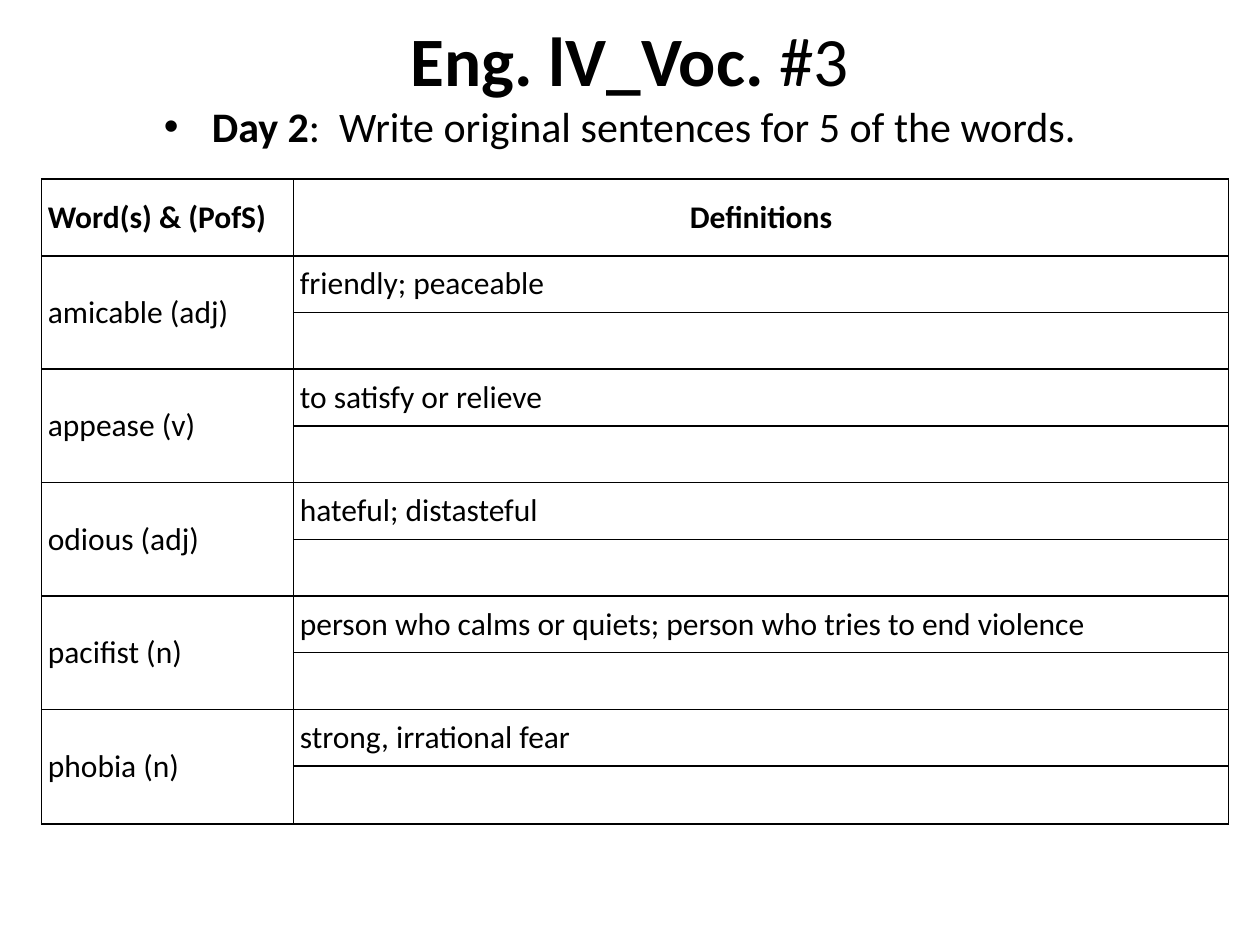
from lxml import etree
from pptx import Presentation
from pptx import util as u
from pptx.dml.color import RGBColor
from pptx.enum import text
from pptx.oxml import ns

COLORS = {"ink": "000000", "paper": "FFFFFF"}
WORDS = [
    ("amicable (adj)", "friendly; peaceable"),
    ("appease (v)", "to satisfy or relieve"),
    ("odious (adj)", "hateful; distasteful"),
    ("pacifist (n)", "person who calms or quiets; person who tries to end violence"),
    ("phobia (n)", "strong, irrational fear"),
]


class VocabSlide:
    font = "Calibri"
    center = text.PP_ALIGN.CENTER
    middle = text.MSO_ANCHOR.MIDDLE

    def __init__(self, prs):
        self.slide = prs.slides.add_slide(prs.slide_layouts[6])
        fill = self.slide.background.fill
        fill.solid()
        fill.fore_color.rgb = RGBColor.from_string(COLORS["paper"])

    def style(self, r, size, bold):
        r.font.name = self.font
        r.font.size = u.Pt(size)
        r.font.bold = bold
        r.font.color.rgb = RGBColor.from_string(COLORS["ink"])

    def line(self, box, bold_part, plain_part, size, anchor):
        sp = self.slide.shapes.add_textbox(*(u.Inches(v) for v in box))
        tf = sp.text_frame
        tf.word_wrap = True
        tf.vertical_anchor = anchor
        p = tf.paragraphs[0]
        p.alignment = self.center
        for part, bold in ((bold_part, True), (plain_part, False)):
            r = p.add_run()
            r.text = part
            self.style(r, size, bold)
        return p

    def bullet(self, p, indent):
        pPr = p._p.get_or_add_pPr()
        pPr.set("marL", str(u.Inches(indent)))
        pPr.set("indent", str(-u.Inches(indent)))
        etree.SubElement(pPr, ns.qn("a:buFont"), typeface="Arial")
        etree.SubElement(pPr, ns.qn("a:buChar"), char="•")

    def border(self, cell):
        tcPr = cell._tc.get_or_add_tcPr()
        for side in ("lnL", "lnR", "lnT", "lnB"):
            ln = etree.SubElement(tcPr, ns.qn(f"a:{side}"), w=str(u.Pt(1)))
            fill = etree.SubElement(ln, ns.qn("a:solidFill"))
            etree.SubElement(fill, ns.qn("a:srgbClr"), val=COLORS["ink"])

    def cell_text(self, cell, words, bold=False, align=None):
        p = cell.text_frame.paragraphs[0]
        p.text = words
        p.alignment = align
        for r in p.runs:
            self.style(r, 18, bold)

    def table(self, left, top, widths, heights):
        frame = self.slide.shapes.add_table(
            len(heights), len(widths), u.Inches(left), u.Inches(top),
            u.Inches(sum(widths)), u.Inches(sum(heights)))
        tbl = frame.table
        tbl.first_row = tbl.horz_banding = False
        for col, width in zip(tbl.columns, widths):
            col.width = u.Inches(width)
        for row, height in zip(tbl.rows, heights):
            row.height = u.Inches(height)
        for cell in tbl.iter_cells():
            cell.margin_left = cell.margin_right = u.Inches(0.05)
            cell.margin_top = cell.margin_bottom = 0
            cell.vertical_anchor = self.middle
            self.border(cell)
            cell.fill.background()
        return tbl


def main():
    prs = Presentation()
    prs.slide_width, prs.slide_height = u.Inches(10), u.Inches(7.5)
    s = VocabSlide(prs)
    s.line((0.5, 0.03, 9, 0.87), "Eng. lV_Voc. ", "#3", 39.6, s.middle)
    task = s.line((0.42, 0.75, 9, 0.5), "Day 2",
                  ":  Write original sentences for 5 of the words.",
                  24, text.MSO_ANCHOR.TOP)
    task.space_before = u.Pt(4.8)
    s.bullet(task, 0.38)

    tbl = s.table(0.33, 1.42, [2, 7.42], [0.61] + [0.45] * 9 + [0.46])
    s.cell_text(tbl.cell(0, 0), "Word(s) & (PofS)", bold=True)
    s.cell_text(tbl.cell(0, 1), "Definitions", bold=True, align=s.center)
    for i, (word, definition) in enumerate(WORDS):
        row = 1 + 2 * i
        tbl.cell(row, 0).merge(tbl.cell(row + 1, 0))
        s.cell_text(tbl.cell(row, 0), word)
        s.cell_text(tbl.cell(row, 1), definition)
    prs.save("out.pptx")


if __name__ == "__main__":
    main()
